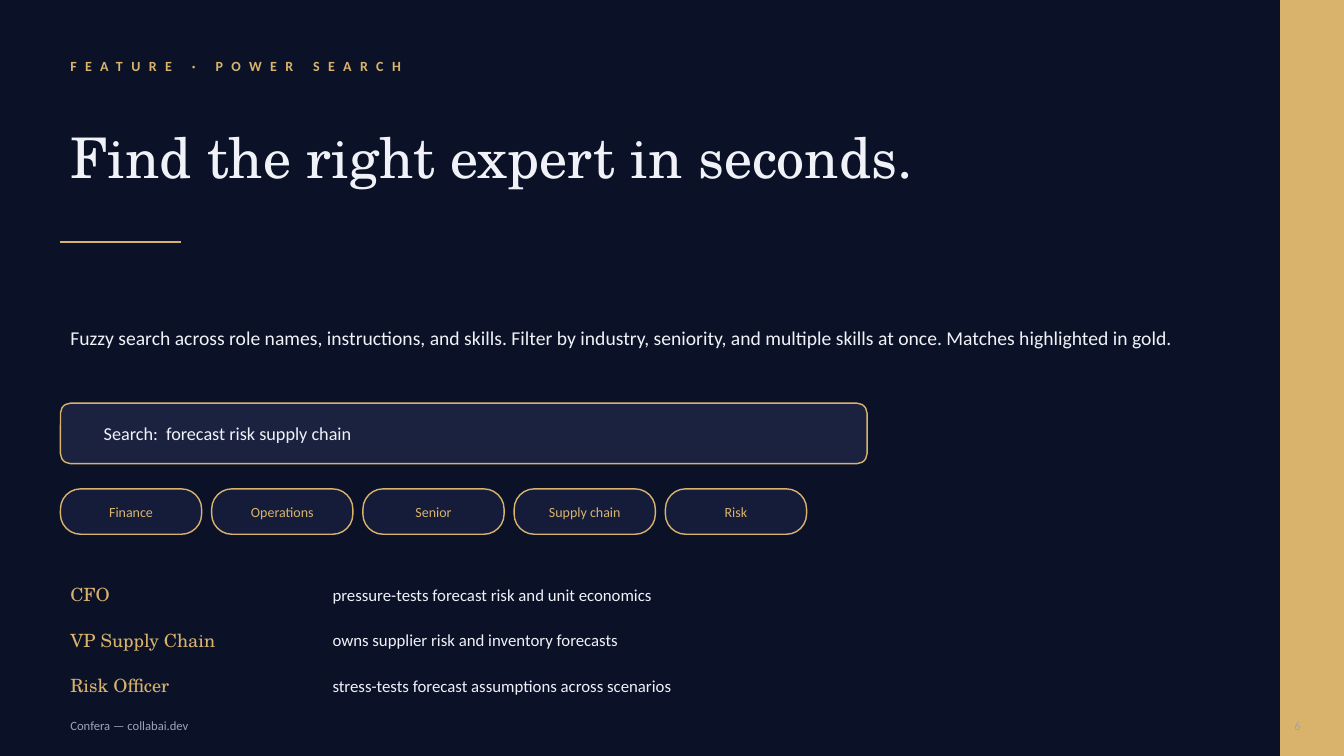
"""Build the Power Search feature slide."""
from lxml import etree
from pptx import Presentation
from pptx.dml.color import RGBColor
from pptx.enum import shapes as sh, text as tx
from pptx.oxml import ns
from pptx.util import Pt

KICKER = "FEATURE · POWER SEARCH"
TITLE = "Find the right expert in seconds."
INTRO = ("Fuzzy search across role names, instructions, and skills. "
         "Filter by industry, seniority, and multiple skills at once. "
         "Matches highlighted in gold.")
QUERY = "Search:\tforecast risk supply chain"
CHIPS = ["Finance", "Operations", "Senior", "Supply chain", "Risk"]
ROLES = [
    ("CFO", "pressure-tests forecast risk and unit economics"),
    ("VP Supply Chain", "owns supplier risk and inventory forecasts"),
    ("Risk Officer", "stress-tests forecast assumptions across scenarios"),
]
FOOTER = "Confera — collabai.dev"
PAGE = "6"

NAVY = RGBColor(0x0B, 0x12, 0x28)
FIELD = RGBColor(0x1A, 0x22, 0x40)
CHIP = RGBColor(0x14, 0x1C, 0x3A)
GOLD = RGBColor(0xD9, 0xB3, 0x6C)
WHITE = RGBColor(0xF0, 0xF2, 0xF8)
GREY = RGBColor(0x9C, 0xA3, 0xBC)
SANS, SERIF = "Calibri", "TeX Gyre Schola"
LEFT, MID, RIGHT = tx.PP_ALIGN.LEFT, tx.PP_ALIGN.CENTER, tx.PP_ALIGN.RIGHT
RECT, ROUND = sh.MSO_SHAPE.RECTANGLE, sh.MSO_SHAPE.ROUNDED_RECTANGLE

WIDE, HIGH = 959.76, 540
EDGE = 43.2
FULL = 864
CHIP_W, CHIP_STEP = 100.8, 108
ROLE_TOP, ROLE_STEP, ROLE_H = 410.4, 32.4, 28.8
NOTE_X = 230.4

prs = Presentation()
prs.slide_width, prs.slide_height = Pt(WIDE), Pt(HIGH)
slide = prs.slides.add_slide(prs.slide_layouts[5])
slide.background.fill.solid()
slide.background.fill.fore_color.rgb = NAVY


def write(shape, words, size=12, color=WHITE, font=SANS, bold=False,
          align=LEFT, gap=0, inset=7.2, tab=0):
    """Put one formatted line of text into a shape."""
    frame = shape.text_frame
    frame.word_wrap = True
    frame.auto_size = tx.MSO_AUTO_SIZE.NONE
    frame.vertical_anchor = tx.MSO_ANCHOR.MIDDLE
    frame.margin_left = Pt(inset)
    para = frame.paragraphs[0]
    para.alignment = align
    if tab:
        stops = etree.SubElement(para._p.get_or_add_pPr(), ns.qn("a:tabLst"))
        etree.SubElement(stops, ns.qn("a:tab"), pos=str(Pt(tab)), algn="l")
    run = para.add_run()
    run.text = words
    run.font.size, run.font.bold, run.font.name = Pt(size), bold, font
    run.font.color.rgb = color
    if gap:
        run._r.get_or_add_rPr().set("spc", str(gap * 100))


def label(x, y, w, h, words, **form):
    """Add a text box."""
    box = slide.shapes.add_textbox(Pt(x), Pt(y), Pt(w), Pt(h))
    write(box, words, **form)


def panel(kind, x, y, w, h, fill, radius=None):
    """Add a filled shape with a gold outline."""
    box = slide.shapes.add_shape(kind, Pt(x), Pt(y), Pt(w), Pt(h))
    box.shadow.inherit = False
    box.fill.solid()
    box.fill.fore_color.rgb = fill
    box.line.color.rgb = GOLD
    box.line.width = Pt(1)
    if radius:
        box.adjustments[0] = radius / min(w, h)
    return box


title = slide.shapes.title
title.left, title.top = Pt(EDGE), Pt(61.2)
title.width, title.height = Pt(FULL), Pt(100.8)
write(title, TITLE, size=40, font=SERIF)

panel(RECT, 914.4, 0, WIDE - 914.4, HIGH, GOLD)
label(EDGE, 36, 576, 21.6, KICKER, size=10, color=GOLD, bold=True, gap=6)

rule = slide.shapes.add_connector(
    sh.MSO_CONNECTOR.STRAIGHT, Pt(EDGE), Pt(172.8), Pt(129.6), Pt(172.8))
rule.line.color.rgb = GOLD
rule.line.width = Pt(2)
etree.SubElement(rule._element.spPr, ns.qn("a:effectLst"))

label(EDGE, 208.8, FULL, 64.8, INTRO, size=14)

search = panel(ROUND, EDGE, 288, 576, 43.2, FIELD, radius=7.2)
write(search, QUERY, size=13, inset=28.8, tab=44.6)

for i, name in enumerate(CHIPS):
    chip = panel(ROUND, EDGE + i * CHIP_STEP, 349.2, CHIP_W, 32.4, CHIP,
                 radius=14.4)
    write(chip, name, size=10, color=GOLD, align=MID)

for i, (role, note) in enumerate(ROLES):
    y = ROLE_TOP + i * ROLE_STEP
    label(EDGE, y, 180, ROLE_H, role, size=13, color=GOLD, font=SERIF)
    label(NOTE_X, y, 669.6, ROLE_H, note)

label(EDGE, 507.6, 432, 21.6, FOOTER, size=9, color=GREY)
label(900, 507.6, 36, 21.6, PAGE, size=9, color=GREY, align=RIGHT)

prs.save("out.pptx")
